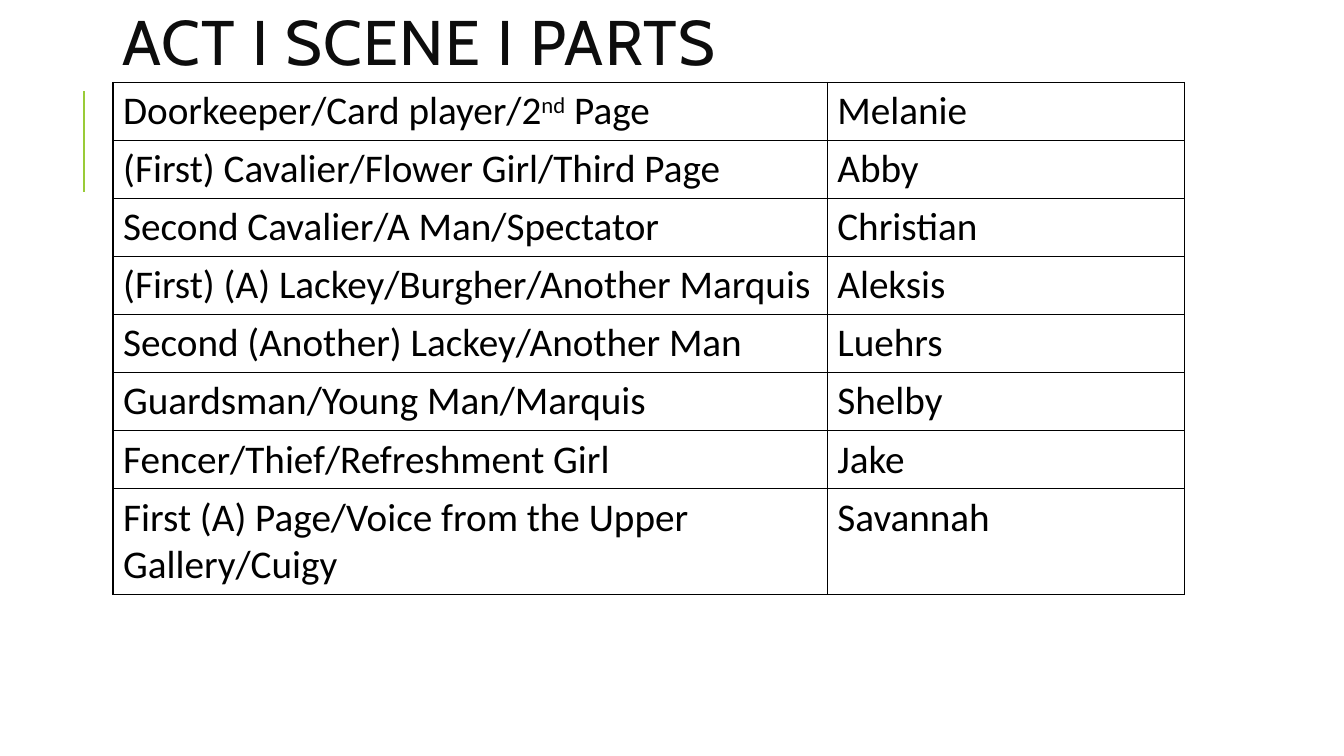
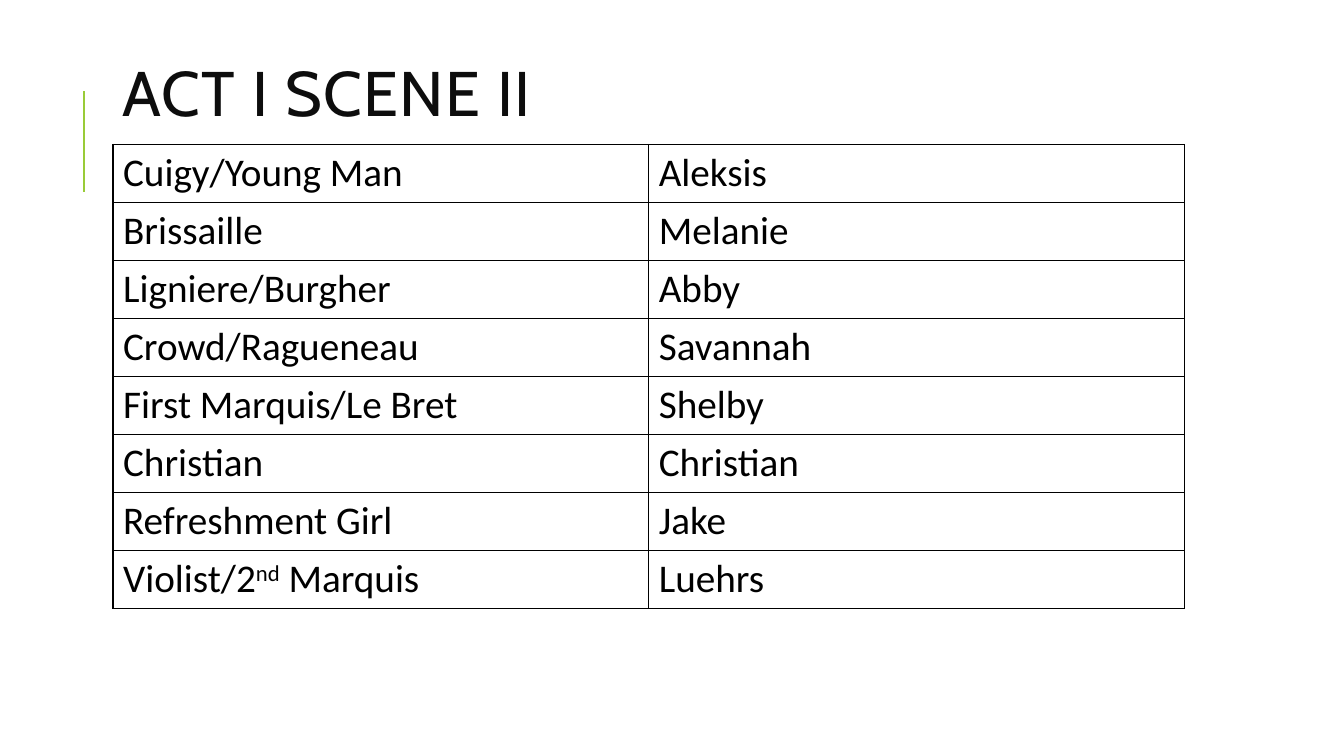
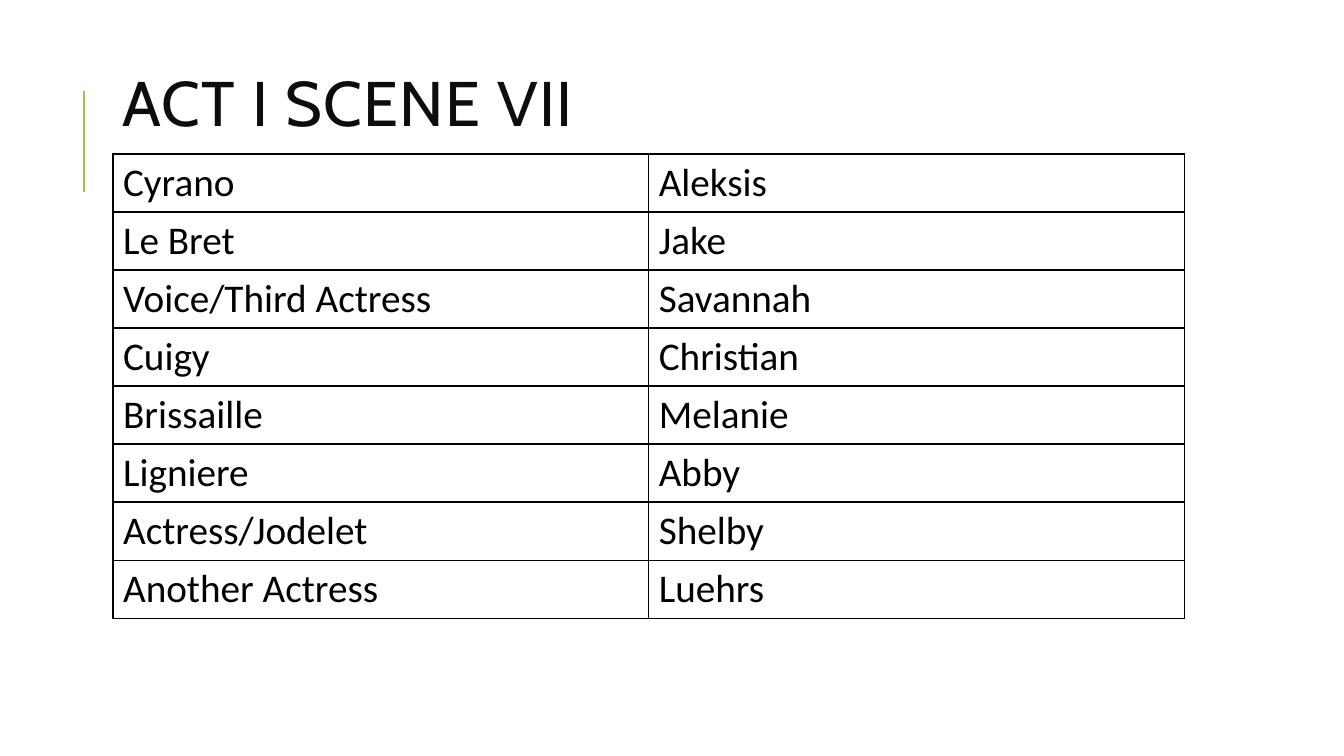
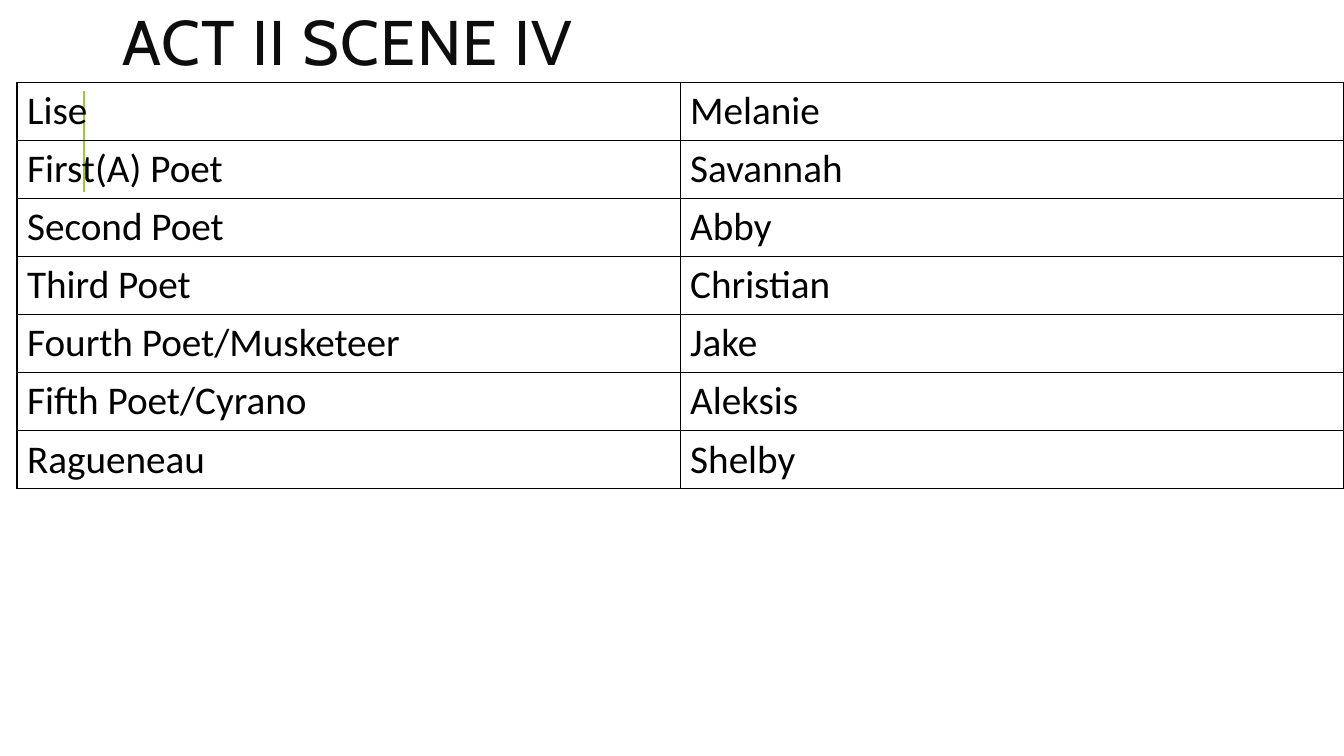
from lxml import etree
from pptx import Presentation
from pptx.dml.color import RGBColor
from pptx.enum.shapes import MSO_CONNECTOR
from pptx.enum.text import MSO_ANCHOR, MSO_AUTO_SIZE, PP_ALIGN
from pptx.oxml.ns import qn
from pptx.util import Cm, Pt

STRAIGHT = MSO_CONNECTOR.STRAIGHT
MIDDLE = MSO_ANCHOR.MIDDLE
NO_AUTOFIT = MSO_AUTO_SIZE.NONE
LEFT = PP_ALIGN.LEFT
TITLE_ONLY = 5

SCENES = [
    dict(
        title="ACT I SCENE I PARTS", title_top=0.3, table_top=2.08,
        left=2.85, widths=(18, 9),
        parts=[
            ("Doorkeeper/Card player/2^nd^ Page", "Melanie"),
            ("(First) Cavalier/Flower Girl/Third Page", "Abby"),
            ("Second Cavalier/A Man/Spectator", "Christian"),
            ("(First) (A) Lackey/Burgher/Another Marquis", "Aleksis"),
            ("Second (Another) Lackey/Another Man", "Luehrs"),
            ("Guardsman/Young Man/Marquis", "Shelby"),
            ("Fencer/Thief/Refreshment Girl", "Jake"),
            ("First (A) Page/Voice from the Upper Gallery/Cuigy", "Savannah"),
        ],
    ),
    dict(
        title="ACT I SCENE II", title_top=1.59, table_top=3.64,
        left=2.85, widths=(13.5, 13.5),
        parts=[
            ("Cuigy/Young Man", "Aleksis"),
            ("Brissaille", "Melanie"),
            ("Ligniere/Burgher", "Abby"),
            ("Crowd/Ragueneau", "Savannah"),
            ("First Marquis/Le Bret", "Shelby"),
            ("Christian", "Christian"),
            ("Refreshment Girl", "Jake"),
            ("Violist/2^nd^ Marquis", "Luehrs"),
        ],
    ),
    dict(
        title="ACT I SCENE VII", title_top=1.83, table_top=3.88,
        left=2.85, widths=(13.5, 13.5),
        parts=[
            ("Cyrano", "Aleksis"),
            ("Le Bret", "Jake"),
            ("Voice/Third Actress", "Savannah"),
            ("Cuigy", "Christian"),
            ("Brissaille", "Melanie"),
            ("Ligniere", "Abby"),
            ("Actress/Jodelet", "Shelby"),
            ("Another Actress", "Luehrs"),
        ],
    ),
    dict(
        title="ACT II SCENE IV", title_top=0.3, table_top=2.08,
        left=0.43, widths=(16.71, 16.71),
        parts=[
            ("Lise", "Melanie"),
            ("First(A) Poet", "Savannah"),
            ("Second Poet", "Abby"),
            ("Third Poet", "Christian"),
            ("Fourth Poet/Musketeer", "Jake"),
            ("Fifth Poet/Cyrano", "Aleksis"),
            ("Ragueneau", "Shelby"),
        ],
    ),
]


def rgb(value):
    return RGBColor.from_string(value)


def write(tf, text, font, size, color, tracking=0, line_spacing=None):
    p = tf.paragraphs[0]
    p.alignment = LEFT
    if line_spacing:
        p.line_spacing = line_spacing
    for i, part in enumerate(text.split("^")):
        r = p.add_run()
        r.text = part
        r.font.name = font
        r.font.size = Pt(size)
        r.font.color.rgb = rgb(color)
        rPr = r._r.get_or_add_rPr()
        if tracking:
            rPr.set("spc", str(tracking * 100))
        if i % 2:
            rPr.set("baseline", "30000")


class Deck:
    INK = "0D0D0D"
    BLACK = "000000"
    GREEN = "99CB38"
    TITLE_FONT = "Cabin"
    BODY_FONT = "Calibri"
    ROW_HEIGHT = 1.46

    def __init__(self):
        self.prs = Presentation()
        self.prs.slide_width = Cm(33.87)
        self.prs.slide_height = Cm(19.05)
        self.s = None

    def slide(self):
        self.s = self.prs.slides.add_slide(self.prs.slide_layouts[TITLE_ONLY])
        self.accent()

    def accent(self):
        line = self.s.shapes.add_connector(
            STRAIGHT, Cm(2.12), Cm(4.83), Cm(2.12), Cm(2.3))
        line.line.color.rgb = rgb(self.GREEN)
        line.line.width = Pt(1.5)
        etree.SubElement(line._element.spPr, qn("a:effectLst"))

    def title(self, text, top):
        sp = self.s.shapes.title
        sp.left, sp.top, sp.width, sp.height = Cm(2.83), Cm(top), Cm(27), Cm(1.78)
        tf = sp.text_frame
        tf.word_wrap = True
        tf.auto_size = NO_AUTOFIT
        tf.vertical_anchor = MIDDLE
        write(tf, text, font=self.TITLE_FONT, size=45, color=self.INK,
              tracking=1, line_spacing=0.8)

    def border(self, cell):
        tcPr = cell._tc.get_or_add_tcPr()
        for side in ("lnL", "lnR", "lnT", "lnB"):
            ln = etree.SubElement(tcPr, qn(f"a:{side}"), w=str(Pt(1)))
            fill = etree.SubElement(ln, qn("a:solidFill"))
            etree.SubElement(fill, qn("a:srgbClr"), val=self.BLACK)

    def table(self, rows, left, top, widths):
        frame = self.s.shapes.add_table(
            len(rows), len(widths), Cm(left), Cm(top),
            Cm(sum(widths)), Cm(self.ROW_HEIGHT * len(rows)))
        table = frame.table
        table.first_row = False
        table.horz_banding = False
        for column, width in zip(table.columns, widths):
            column.width = Cm(width)
        for row, texts in zip(table.rows, rows):
            row.height = Cm(self.ROW_HEIGHT)
            for cell, text in zip(row.cells, texts):
                self.border(cell)
                cell.fill.background()
                write(cell.text_frame, text, font=self.BODY_FONT, size=28,
                      color=self.BLACK)


def main():
    deck = Deck()
    for scene in SCENES:
        deck.slide()
        deck.title(scene["title"], scene["title_top"])
        deck.table(scene["parts"], scene["left"], scene["table_top"], scene["widths"])
    deck.prs.save("out.pptx")


if __name__ == "__main__":
    main()
